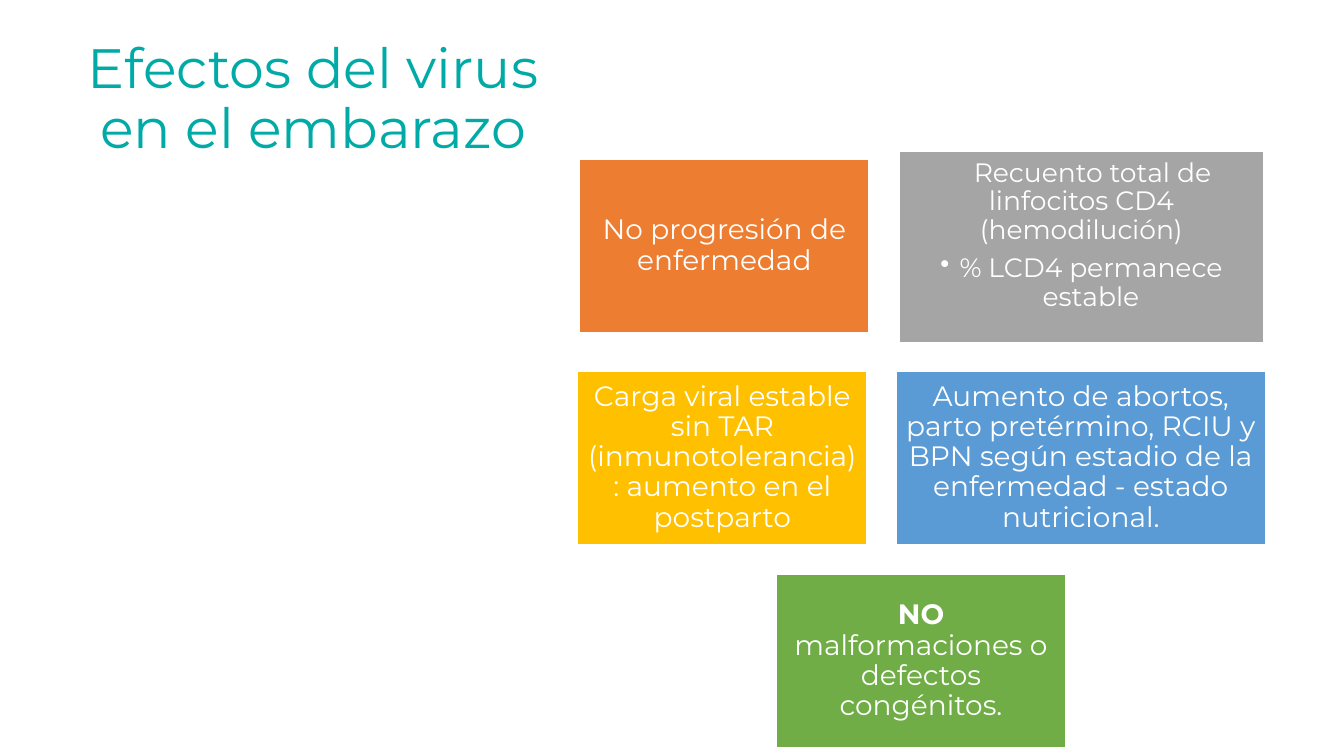
"""Build the slide on the effects of the virus in pregnancy."""
import dataclasses
import typing

import lxml.etree
import pptx
import pptx.dml.color
import pptx.enum.shapes
import pptx.enum.text
import pptx.oxml.ns
import pptx.util

RGB = pptx.dml.color.RGBColor
ANCHOR = pptx.enum.text.MSO_ANCHOR
SCALE = 9144
FACE = "Montserrat"
WHITE = RGB(0xFF, 0xFF, 0xFF)
TEAL = RGB(0x00, 0xAA, 0xA7)
ORANGE = RGB(0xED, 0x7D, 0x31)
GRAY = RGB(0xA5, 0xA5, 0xA5)
YELLOW = RGB(0xFF, 0xC0, 0x00)
BLUE = RGB(0x5B, 0x9B, 0xD5)
GREEN = RGB(0x70, 0xAD, 0x47)


@dataclasses.dataclass
class Para:
    text: str
    after: float = 7
    margin: int = 0
    indent: int = 0
    level: int = 0
    bold: str = ""


@dataclasses.dataclass
class Card:
    left: int
    top: int
    width: int
    height: int
    color: RGB
    paras: list[Para]
    size: float = 20
    anchor: ANCHOR = ANCHOR.MIDDLE


CARDS = [
    Card(575, 158, 287, 172, ORANGE, [Para("No progresión de enfermedad")]),
    Card(892, 150, 361, 190, GRAY, [
        Para("Recuento total de linfocitos CD4 (hemodilución)", 6.65, indent=22),
        Para("% LCD4 permanece estable", 2.85, 19, -19, 1),
    ], 19, ANCHOR.TOP),
    Card(573, 368, 287, 172, YELLOW, [
        Para("Carga viral estable sin TAR (inmunotolerancia): aumento en el postparto"),
    ]),
    Card(889, 368, 366, 172, BLUE, [
        Para("Aumento de abortos, parto pretérmino, RCIU y BPN según estadio "
             "de la enfermedad - estado nutricional."),
    ]),
    Card(770, 570, 287, 172, GREEN, [
        Para("malformaciones o defectos congénitos.", bold="NO "),
    ]),
]


def px(count: int) -> pptx.util.Emu:
    """Turn px into EMU."""
    return pptx.util.Emu(count * SCALE)


def apply(target: typing.Any, values: dict[str, typing.Any]) -> None:
    """Set each attribute named in the values."""
    for name, value in values.items():
        setattr(target, name, value)


def place(shape: typing.Any, left: int, top: int, width: int, height: int) -> None:
    """Move and size a shape."""
    apply(shape, {"left": px(left), "top": px(top),
                  "width": px(width), "height": px(height)})


def style(line: typing.Any, size: float, color: RGB, after: float) -> None:
    """Format a paragraph and its font."""
    apply(line, {"alignment": pptx.enum.text.PP_ALIGN.CENTER, "line_spacing": 0.9,
                 "space_before": pptx.util.Pt(0), "space_after": pptx.util.Pt(after)})
    for run in line.runs:
        apply(run.font, {"name": FACE, "size": pptx.util.Pt(size)})
        run.font.color.rgb = color


def write(line: typing.Any, para: Para, size: float) -> None:
    """Fill a paragraph of a card."""
    line.level = para.level
    props = line._p.get_or_add_pPr()
    props.set("marL", str(px(para.margin)))
    props.set("indent", str(px(para.indent)))
    if para.level:
        mark = lxml.etree.SubElement(props, pptx.oxml.ns.qn("a:buChar"))
        mark.set("char", "•")
    if para.bold:
        run = line.add_run()
        run.text = para.bold
        run.font.bold = True
    line.add_run().text = para.text
    style(line, size, WHITE, para.after)


def draw(slide: typing.Any, card: Card) -> None:
    """Draw a filled card with its text."""
    kind = pptx.enum.shapes.MSO_SHAPE.RECTANGLE
    shape = slide.shapes.add_shape(kind, 0, 0, 0, 0)
    place(shape, card.left, card.top, card.width, card.height)
    shape.shadow.inherit = False
    shape.fill.solid()
    shape.fill.fore_color.rgb = card.color
    shape.line.color.rgb = WHITE
    shape.line.width = pptx.util.Pt(1)
    frame = shape.text_frame
    sides = ("left", "top", "right", "bottom")
    apply(frame, {f"margin_{side}": px(8) for side in sides})
    apply(frame, {"word_wrap": True, "vertical_anchor": card.anchor})
    for spot, para in enumerate(card.paras):
        line = frame.add_paragraph() if spot else frame.paragraphs[0]
        write(line, para, card.size)


def main() -> None:
    """Build and save the deck."""
    deck = pptx.Presentation()
    apply(deck, {"slide_width": px(1333), "slide_height": px(750)})
    slide = deck.slides.add_slide(deck.slide_layouts[5])
    title = slide.shapes.title
    place(title, 55, 27, 511, 145)
    title.text_frame.text = "Efectos del virus en el embarazo"
    apply(title.text_frame, {"word_wrap": True, "vertical_anchor": ANCHOR.MIDDLE,
                             "auto_size": pptx.enum.text.MSO_AUTO_SIZE.NONE})
    style(title.text_frame.paragraphs[0], 39.6, TEAL, 0)
    for card in CARDS:
        draw(slide, card)
    deck.save("out.pptx")


if __name__ == "__main__":
    main()
